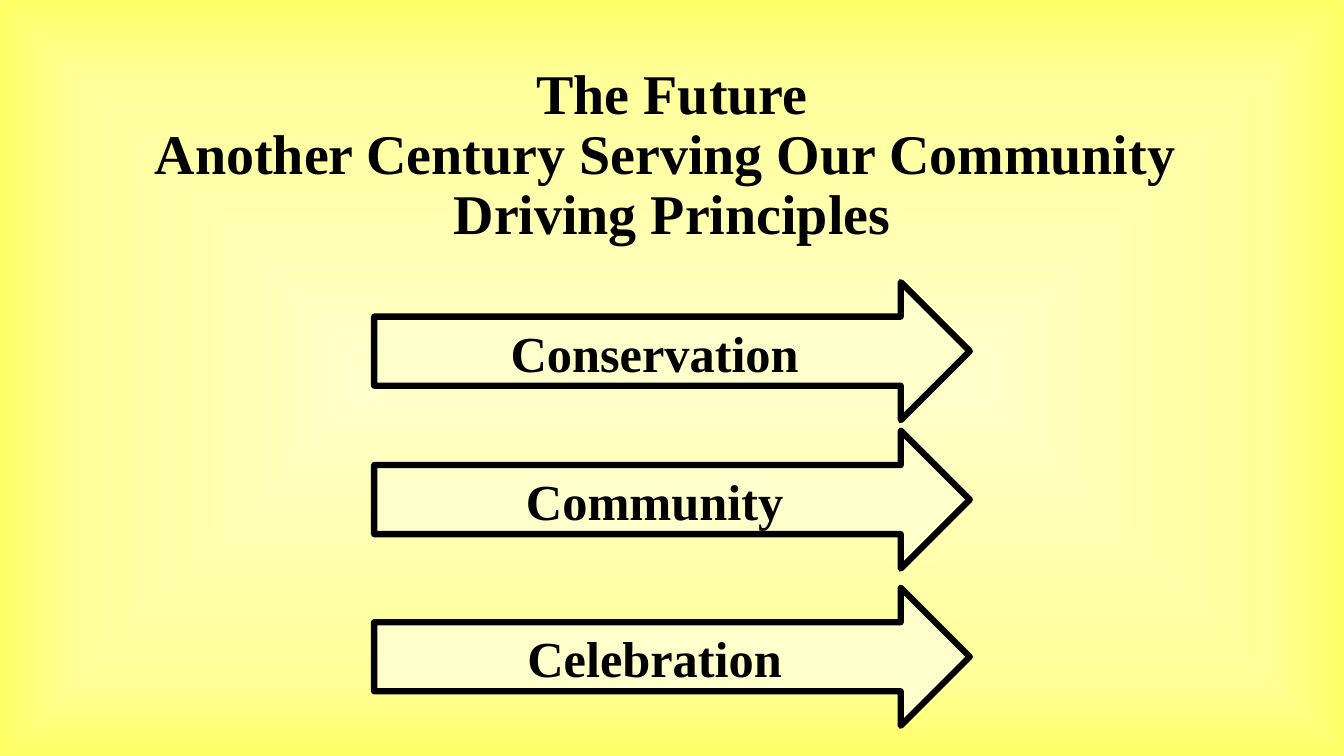
from pptx import Presentation
from pptx import util as u
from pptx.dml.color import RGBColor
from pptx.enum import shapes, text
from pptx.oxml import parse_xml
from pptx.oxml.ns import nsdecls, qn

# Content
TITLE = "The Future\vAnother Century Serving Our Community \vDriving Principles"
PRINCIPLES = [("Conservation", 7.11), ("Community", 10.85), ("Celebration", 14.81)]

# Look
FONT = "Times New Roman"
BLACK, CREAM = "000000", "FFFFCC"
GLOW = [(0, CREAM), (79, "FFFF99"), (100, "FFFF66")]
SLIDE_WIDTH, SLIDE_HEIGHT = 33.87, 19.05
TITLE_WIDTH, TITLE_HEIGHT, TITLE_TOP = 29.31, 5.84, 1.02
ARROW_WIDTH, ARROW_HEIGHT = 15.01, 3.48


def color(value):
    return RGBColor.from_string(value)


def write(shape, content, size, anchor, fit, spacing=1.0):
    frame = shape.text_frame
    frame.text = content
    frame.word_wrap = True
    frame.vertical_anchor = anchor
    frame.auto_size = fit
    paragraph = frame.paragraphs[0]
    paragraph.alignment = text.PP_ALIGN.CENTER
    paragraph.line_spacing = spacing
    for run in paragraph.runs:
        run.font.name = FONT
        run.font.size = u.Pt(size)
        run.font.bold = True
        run.font.color.rgb = color(BLACK)


def glow_background(slide):
    slide.background.fill.gradient()
    gradient = slide.element.find(".//" + qn("a:gradFill"))
    stops = "".join(
        f'<a:gs pos="{position * 1000}"><a:srgbClr val="{value}"/></a:gs>'
        for position, value in GLOW)
    gradient.getparent().replace(gradient, parse_xml(
        f'<a:gradFill {nsdecls("a")} rotWithShape="1"><a:gsLst>{stops}</a:gsLst>'
        '<a:path path="shape"><a:fillToRect l="50000" t="50000" r="50000" b="50000"/>'
        '</a:path></a:gradFill>'))


def centered_left(width):
    return u.Cm((SLIDE_WIDTH - width) / 2)


def main():
    presentation = Presentation()
    presentation.slide_width = u.Cm(SLIDE_WIDTH)
    presentation.slide_height = u.Cm(SLIDE_HEIGHT)
    slide = presentation.slides.add_slide(presentation.slide_layouts[5])
    glow_background(slide)

    # Title
    title = slide.shapes.title
    title.left, title.top = centered_left(TITLE_WIDTH), u.Cm(TITLE_TOP)
    title.width, title.height = u.Cm(TITLE_WIDTH), u.Cm(TITLE_HEIGHT)
    write(title, TITLE, size=40, anchor=text.MSO_ANCHOR.MIDDLE,
          fit=text.MSO_AUTO_SIZE.NONE, spacing=0.9)

    # One arrow per principle
    for principle, top in PRINCIPLES:
        arrow = slide.shapes.add_shape(
            shapes.MSO_SHAPE.RIGHT_ARROW, centered_left(ARROW_WIDTH), u.Cm(top),
            u.Cm(ARROW_WIDTH), u.Cm(ARROW_HEIGHT))
        arrow.shadow.inherit = False
        arrow.fill.solid()
        arrow.fill.fore_color.rgb = color(CREAM)
        arrow.line.color.rgb = color(BLACK)
        arrow.line.width = u.Pt(4.5)
        write(arrow, principle, size=36, anchor=text.MSO_ANCHOR.TOP,
              fit=text.MSO_AUTO_SIZE.SHAPE_TO_FIT_TEXT)

    presentation.save("out.pptx")


if __name__ == "__main__":
    main()
